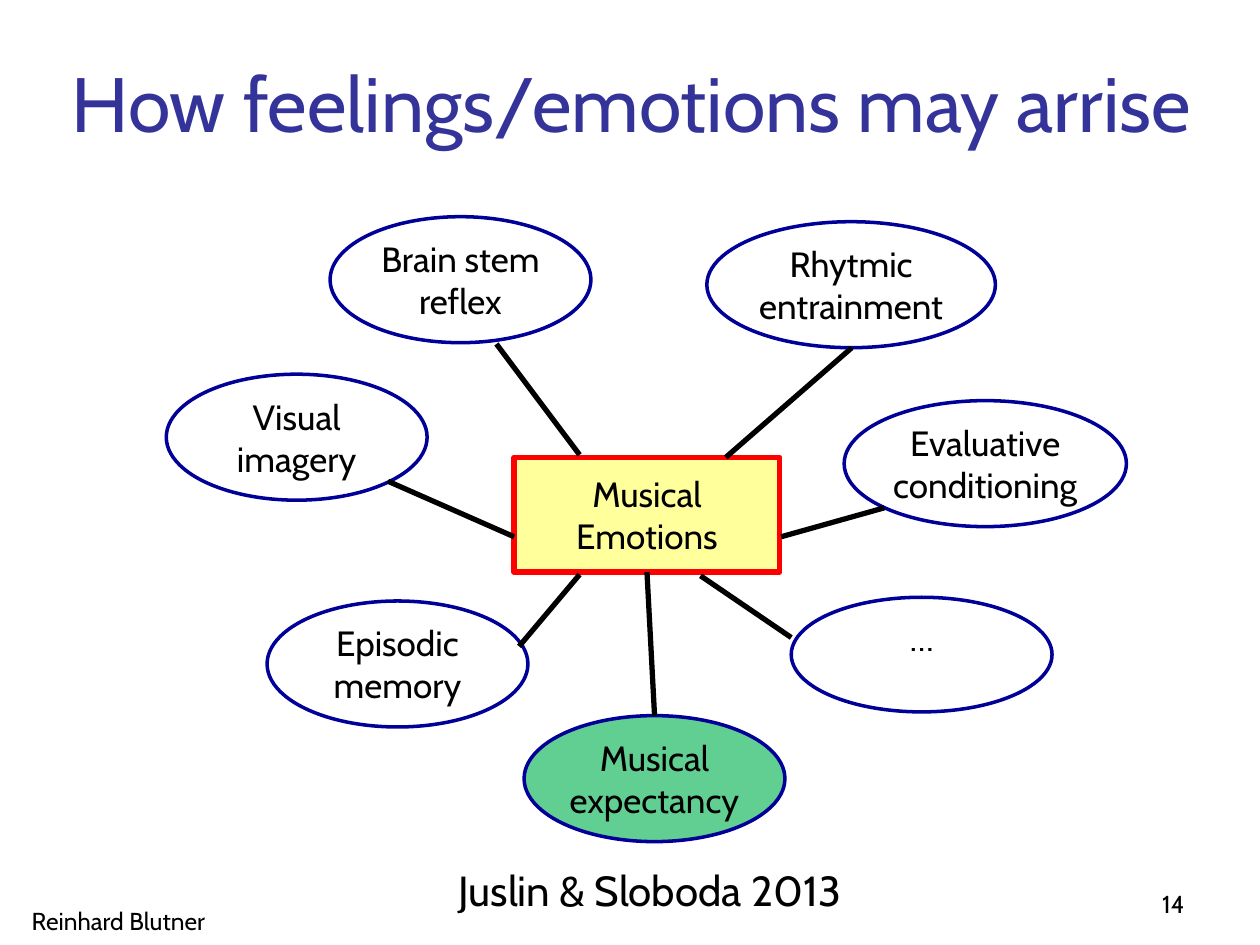
from lxml.etree import SubElement
from pptx import Presentation
from pptx.dml.color import RGBColor
from pptx.enum.shapes import MSO_CONNECTOR, MSO_SHAPE
from pptx.enum.text import MSO_ANCHOR, PP_ALIGN
from pptx.oxml.ns import qn
from pptx.util import Inches, Pt


def color(hex_string):
    return RGBColor.from_string(hex_string)


class SlideBuilder:
    FONT = "Cabin"
    BLACK, TITLE, NAVY, RED = "000000", "333399", "000099", "FF0000"
    YELLOW, GREEN = "FFFF00", "00B050"
    BOX_MARGINS = (0.12, 0.12)
    OVAL_MARGINS = (0.04, 0.02)

    def __init__(self, slide):
        self.slide = slide

    def set_text(self, shape, text, size, align, hex_string=BLACK,
                 anchor=MSO_ANCHOR.TOP, margins=(0.1, 0.05)):
        frame = shape.text_frame
        frame.text = text
        frame.word_wrap = True
        frame.vertical_anchor = anchor
        frame.margin_left = frame.margin_right = Inches(margins[0])
        frame.margin_top = frame.margin_bottom = Inches(margins[1])
        paragraph = frame.paragraphs[0]
        paragraph.alignment = align
        for run in paragraph.runs:
            run.font.name = self.FONT
            run.font.size = Pt(size)
            run.font.color.rgb = color(hex_string)

    def title(self, text, left, top, width, height):
        shape = self.slide.shapes.title
        shape.left, shape.top = Inches(left), Inches(top)
        shape.width, shape.height = Inches(width), Inches(height)
        self.set_text(shape, text, 44, PP_ALIGN.CENTER, self.TITLE, MSO_ANCHOR.MIDDLE)

    def label(self, text, left, top, width, height, size, align):
        shape = self.slide.shapes.add_textbox(
            Inches(left), Inches(top), Inches(width), Inches(height))
        self.set_text(shape, text, size, align)

    def node(self, kind, text, left, top, width, height, line, line_width,
             margins, fill=None, opacity=100):
        """Add an outlined shape with centred text; opacity is in percent."""
        shape = self.slide.shapes.add_shape(
            kind, Inches(left), Inches(top), Inches(width), Inches(height))
        shape.shadow.inherit = False
        shape.line.color.rgb = color(line)
        shape.line.width = Pt(line_width)
        if fill:
            shape.fill.solid()
            shape.fill.fore_color.rgb = color(fill)
            fill_color = shape._element.spPr.find(qn("a:solidFill"))[0]
            SubElement(fill_color, qn("a:alpha"), val=str(opacity * 1000))
        else:
            shape.fill.background()
        self.set_text(shape, text, 20, PP_ALIGN.CENTER, margins=margins)
        return shape

    def box(self, text, left, top, width, height, **fill):
        return self.node(MSO_SHAPE.RECTANGLE, text, left, top, width, height,
                         self.RED, 3, self.BOX_MARGINS, **fill)

    def oval(self, text, left, top, width=2.07, height=1, **fill):
        return self.node(MSO_SHAPE.OVAL, text, left, top, width, height,
                         self.NAVY, 2, self.OVAL_MARGINS, **fill)

    def link(self, start, end):
        connector = self.slide.shapes.add_connector(
            MSO_CONNECTOR.STRAIGHT, *map(Inches, start + end))
        connector.line.color.rgb = color(self.BLACK)
        connector.line.width = Pt(3)
        SubElement(connector._element.spPr, qn("a:effectLst"))
        return connector


def main():
    presentation = Presentation()
    presentation.slide_width, presentation.slide_height = Inches(10), Inches(7.5)
    slide = presentation.slides.add_slide(presentation.slide_layouts[5])
    builder = SlideBuilder(slide)

    builder.title("How feelings/emotions may arrise", 0.23, 0.45, 9.57, 0.72)
    builder.label("Reinhard Blutner", -0.4, 7.14, 2.68, 0.36, 14, PP_ALIGN.CENTER)
    builder.label("14", 7.17, 7.01, 2.33, 0.52, 14, PP_ALIGN.RIGHT)
    builder.label("Juslin & Sloboda 2013", 3.54, 6.81, 3.49, 0.5, 24, PP_ALIGN.JUSTIFY)

    emotions = builder.box("Musical Emotions", 4.08, 3.63, 2.11, 0.91,
                           fill=builder.YELLOW, opacity=39)
    builder.oval("Rhytmic entrainment", 5.61, 1.76, width=2.29)
    expectancy = builder.oval("Musical expectancy", 4.16, 5.68,
                              fill=builder.GREEN, opacity=62)
    builder.oval("Brain stem reflex", 2.62, 1.72)
    builder.oval("Visual imagery", 1.32, 2.97)
    builder.oval("Evaluative conditioning", 6.7, 3.18, width=2.24)
    builder.oval("Episodic memory", 2.12, 4.77)
    builder.oval("…", 6.28, 4.74, height=0.91)

    for start, end in [
        ((3.08, 3.82), (4.08, 4.26)),
        ((3.94, 2.73), (4.6, 3.61)),
        ((6.76, 2.76), (5.76, 3.63)),
        ((6.2, 4.26), (7.02, 4.03)),
        ((5.56, 4.57), (6.28, 5.06)),
        ((4.12, 5.13), (4.6, 4.56)),
    ]:
        builder.link(start, end)
    expectancy_link = builder.link((5.14, 4.54), (5.19, 5.68))
    expectancy_link.begin_connect(emotions, 2)
    expectancy_link.end_connect(expectancy, 0)

    presentation.save("out.pptx")


if __name__ == "__main__":
    main()
